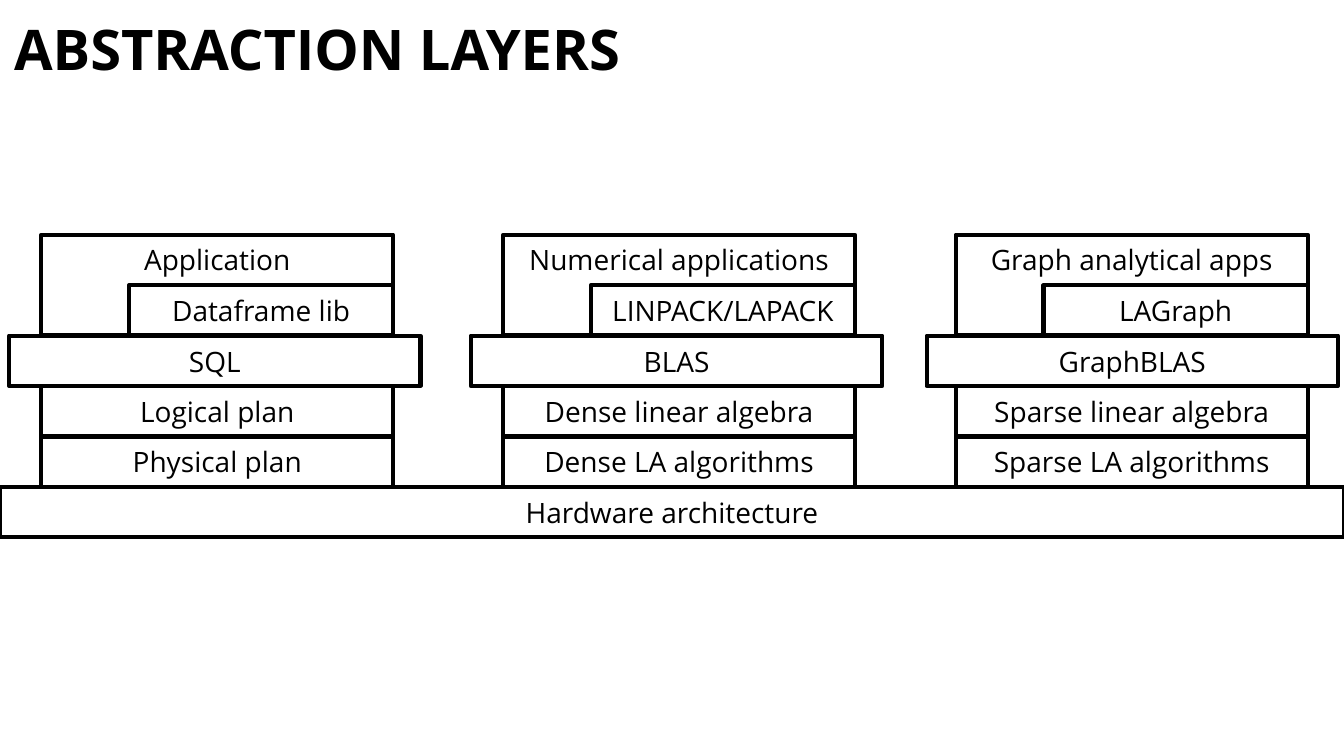
from dataclasses import dataclass

from pptx import Presentation
from pptx.dml.color import RGBColor
from pptx.enum.shapes import MSO_SHAPE as SHAPE
from pptx.enum.text import MSO_ANCHOR as ANCHOR, PP_ALIGN as ALIGN
from pptx.util import Emu, Pt

PX = 9144  # EMU per px, 100 px to the inch
SLIDE_WIDTH, SLIDE_HEIGHT = 1333, 750
ROW = 50
STACK_TOP = 233
STACK_WIDTH, LIBRARY_WIDTH, INTERFACE_WIDTH = 349, 262, 408

# Stack left, interface left, then the layers from top to bottom
STACKS = [
    (41, 9, ("Application", "Dataframe lib", "SQL",
             "Logical plan", "Physical plan")),
    (499, 467, ("Numerical applications", "LINPACK/LAPACK", "BLAS",
                "Dense linear algebra", "Dense LA algorithms")),
    (948, 919, ("Graph analytical apps", "LAGraph", "GraphBLAS",
                "Sparse linear algebra", "Sparse LA algorithms")),
]


@dataclass(frozen=True)
class Theme:
    ink: RGBColor = RGBColor(0, 0, 0)
    font: str = "Open Sans"
    title_size: int = 40
    layer_size: int = 20
    outline: int = 3


THEME = Theme()


def px(length):
    return Emu(length * PX)


def apply(target, formats):
    for name, value in formats.items():
        setattr(target, name, value)


def write(frame, text, size, align, bold=False):
    paragraph = frame.paragraphs[0]
    paragraph.text = text
    paragraph.alignment = align
    font = paragraph.runs[0].font
    apply(font, {"name": THEME.font, "size": Pt(size), "bold": bold})
    font.color.rgb = THEME.ink


def add_title(slide, text):
    title = slide.shapes.title
    apply(title, {"left": px(4), "top": px(6),
                  "width": px(SLIDE_WIDTH), "height": px(83)})
    apply(title.text_frame, {"word_wrap": True,
                             "vertical_anchor": ANCHOR.MIDDLE})
    write(title.text_frame, text, THEME.title_size, ALIGN.LEFT, bold=True)


def add_layer(shapes, text, left, row, width, rows=1):
    """Outline one layer; a layer taller than one row has its text on top."""
    layer = shapes.add_shape(SHAPE.RECTANGLE, px(left),
                             px(STACK_TOP + row * ROW),
                             px(width), px(rows * ROW))
    layer.shadow.inherit = False
    layer.fill.background()
    layer.line.color.rgb = THEME.ink
    layer.line.width = Pt(THEME.outline)
    frame = layer.text_frame
    apply(frame, {"word_wrap": True, "vertical_anchor": ANCHOR.MIDDLE})
    if rows > 1:
        apply(frame, {"vertical_anchor": ANCHOR.TOP, "margin_top": px(8)})
    write(frame, text, THEME.layer_size, ALIGN.CENTER)


def add_stack(slide, left, interface_left, layers):
    application, library, interface, theory, implementation = layers
    shapes = slide.shapes.add_group_shape().shapes
    library_left = left + STACK_WIDTH - LIBRARY_WIDTH
    add_layer(shapes, application, left, 0, STACK_WIDTH, rows=2)
    add_layer(shapes, library, library_left, 1, LIBRARY_WIDTH)
    add_layer(shapes, interface, interface_left, 2, INTERFACE_WIDTH)
    add_layer(shapes, theory, left, 3, STACK_WIDTH)
    add_layer(shapes, implementation, left, 4, STACK_WIDTH)


def main():
    deck = Presentation()
    apply(deck, {"slide_width": px(SLIDE_WIDTH),
                 "slide_height": px(SLIDE_HEIGHT)})
    slide = deck.slides.add_slide(deck.slide_layouts[5])
    add_title(slide, "ABSTRACTION LAYERS")
    for left, interface_left, layers in STACKS:
        add_stack(slide, left, interface_left, layers)
    add_layer(slide.shapes, "Hardware architecture", 0, 5, SLIDE_WIDTH)
    deck.save("out.pptx")


if __name__ == "__main__":
    main()
